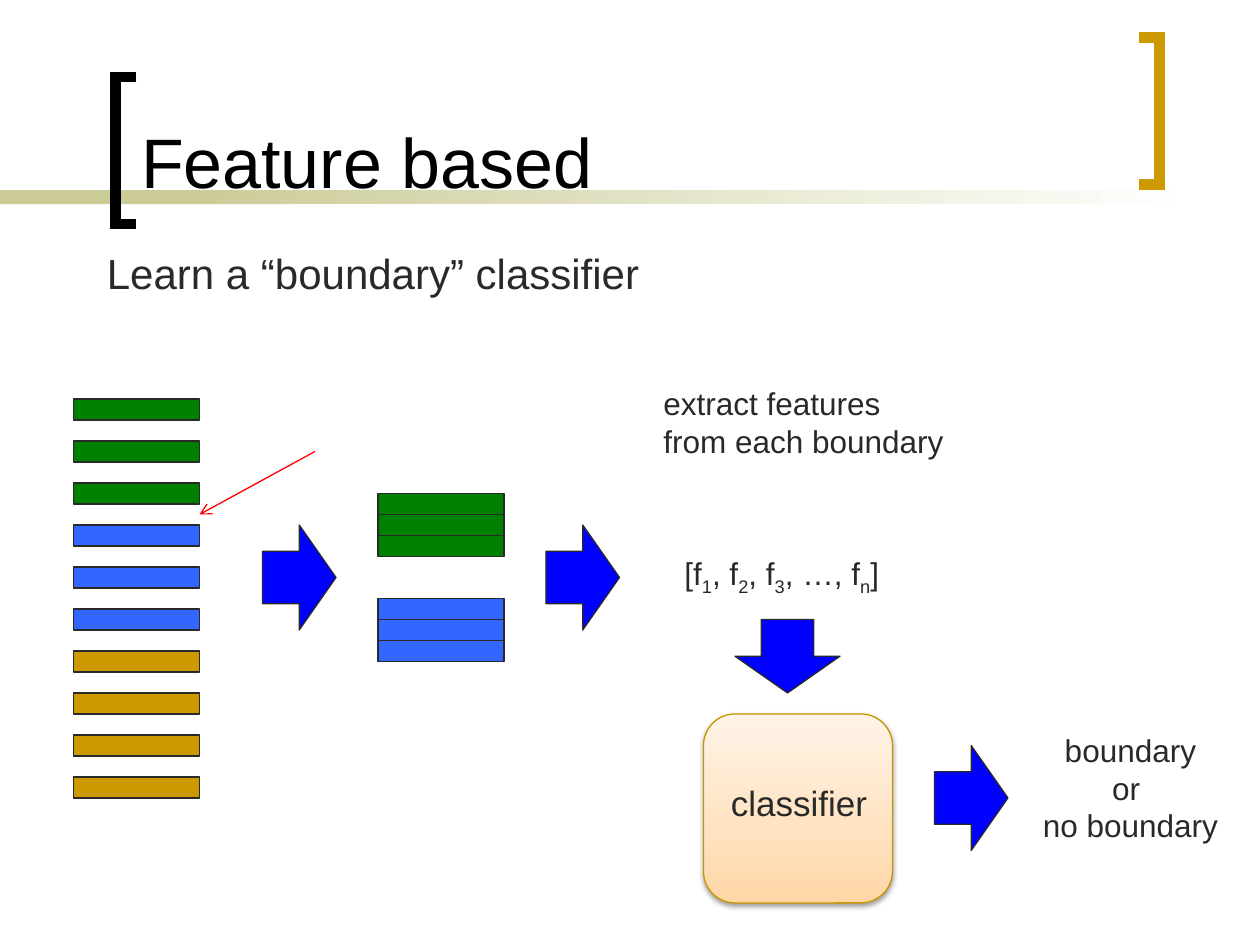
from dataclasses import dataclass

from lxml.etree import SubElement
from pptx import Presentation
from pptx.dml.color import RGBColor
from pptx.enum.shapes import MSO_CONNECTOR, MSO_SHAPE
from pptx.enum.text import MSO_ANCHOR, PP_ALIGN
from pptx.oxml.ns import qn
from pptx.util import Pt


@dataclass(frozen=True)
class Theme:
    """Colours, font and type sizes of the slide."""
    font: str = "Arial"
    black: str = "000000"
    ink: str = "292929"
    green: str = "008000"
    blue: str = "3366FF"
    gold: str = "CC9900"
    arrow: str = "0000FF"
    pointer: str = "FF0000"
    band: str = "CCCC99"
    white: str = "FFFFFF"
    classifier_line: str = "C89600"
    classifier_stops: tuple = ((0, "FFD6A5"), (35, "FFE2BF"), (100, "FFF3E7"))
    title_size: int = 40
    body_size: int = 24
    classifier_size: int = 20
    label_size: int = 18
    thin: float = 0.75
    thick: float = 6


THEME = Theme()


def add_text(slide, box, text, size=THEME.label_size, color=THEME.ink, wrap=False,
             anchor=MSO_ANCHOR.TOP, align=PP_ALIGN.LEFT, space_before=0):
    """Add a text box; parts between underscores become subscripts."""
    frame = slide.shapes.add_textbox(*map(Pt, box)).text_frame
    frame.word_wrap = wrap
    frame.vertical_anchor = anchor
    for index, line in enumerate(text.split("\n")):
        paragraph = frame.add_paragraph() if index else frame.paragraphs[0]
        paragraph.alignment = align
        paragraph.space_before = Pt(space_before)
        for position, part in enumerate(line.split("_")):
            run = paragraph.add_run()
            run.text = part
            run.font.name = THEME.font
            run.font.size = Pt(size)
            run.font.color.rgb = RGBColor.from_string(color)
            if position % 2:
                run.font._element.set("baseline", "-25000")


def add_block(slide, box, fill=None, line=THEME.ink, kind=MSO_SHAPE.RECTANGLE, rotation=0):
    """Add a preset shape with a solid fill and a thin outline."""
    shape = slide.shapes.add_shape(kind, *map(Pt, box))
    shape.shadow.inherit = False
    shape.rotation = rotation
    if fill:
        shape.fill.solid()
        shape.fill.fore_color.rgb = RGBColor.from_string(fill)
    if line:
        shape.line.color.rgb = RGBColor.from_string(line)
        shape.line.width = Pt(THEME.thin)
    else:
        shape.line.fill.background()
    return shape


def set_gradient(shape, stops, angle):
    """Fill a shape with a linear gradient of (percent, colour) stops."""
    shape.fill.gradient()
    shape.fill.gradient_angle = angle
    stop_list = shape._element.spPr.find(qn("a:gradFill")).find(qn("a:gsLst"))
    for stop in list(stop_list):
        stop_list.remove(stop)
    for percent, color in stops:
        stop = SubElement(stop_list, qn("a:gs"), pos=str(percent * 1000))
        SubElement(stop, qn("a:srgbClr"), val=color)


def add_bracket(slide, box, color, opens_right):
    """Draw a square bracket that fills the box."""
    left, top, width, height = box
    tip, spine = (left + width, left) if opens_right else (left, left + width)
    builder = slide.shapes.build_freeform(Pt(tip), Pt(top))
    corners = [(spine, top), (spine, top + height), (tip, top + height)]
    builder.add_line_segments([(Pt(x), Pt(y)) for x, y in corners], close=False)
    bracket = builder.convert_to_shape()
    bracket.shadow.inherit = False
    bracket.fill.background()
    bracket.line.color.rgb = RGBColor.from_string(color)
    bracket.line.width = Pt(THEME.thick)
    SubElement(bracket.line._get_or_add_ln(), qn("a:miter"), lim="800000")


def add_header(slide, box):
    """Draw the band, the brackets and the title."""
    left, top, width, height = box
    band_top = top + 108.7
    add_block(slide, (left, band_top, 168, 8), THEME.band, line=None)
    fade = add_block(slide, (left + 114, band_top, width - 150, 8), line=None)
    set_gradient(fade, ((0, THEME.band), (100, THEME.white)), 0)
    add_bracket(slide, (left + 66, top + 44, 12, 84), THEME.black, True)
    add_bracket(slide, (left + 650.6, top + 21.4, 12, 84), THEME.gold, False)
    add_text(slide, (left + 73.5, top + 8, 564, height - 25), "Feature based",
             size=THEME.title_size, color=THEME.black, wrap=True, anchor=MSO_ANCHOR.BOTTOM)


def add_bars(slide, box, colors, step):
    """Stack bars downwards from the box of the first one."""
    left, top, width, height = box
    for index, color in enumerate(colors):
        add_block(slide, (left, top + index * step, width, height), color)


def add_arrow(slide, left, top, rotation=0):
    """Draw one block arrow of the flow."""
    add_block(slide, (left, top, 42, 60), THEME.arrow,
              kind=MSO_SHAPE.RIGHT_ARROW, rotation=rotation)


def add_pointer(slide, start, end):
    """Draw the thin line that points at a boundary."""
    connector = slide.shapes.add_connector(MSO_CONNECTOR.STRAIGHT, *map(Pt, start + end))
    connector.line.color.rgb = RGBColor.from_string(THEME.pointer)
    connector.line.width = Pt(THEME.thin)
    SubElement(connector.line._get_or_add_ln(), qn("a:tailEnd"), type="arrow")
    SubElement(connector._element.spPr, qn("a:effectLst"))


def add_segments(slide, box):
    """Draw the sentence bars and the two segments grouped from them."""
    left, top, width, height = box
    sentences = [THEME.green] * 3 + [THEME.blue] * 3 + [THEME.gold] * 4
    add_bars(slide, (left, top, 72, 12), sentences, 24)
    add_arrow(slide, left + 108, top + 72)
    for offset, color in ((54, THEME.green), (114, THEME.blue)):
        add_bars(slide, (left + width - 72, top + offset, 72, 12), [color] * 3, 12)
    add_pointer(slide, (left + 138, top + 30), (left + 72, top + 66))


def add_features(slide, box):
    """Write the feature caption and the feature vector."""
    left, top, width, height = box
    add_text(slide, (left, top, width, 51), "extract features\nfrom each boundary")
    add_text(slide, (left + 12, top + height - 29, 130, 29), "[f_1_, f_2_, f_3_, …, f_n_]")


def add_classifier(slide, box):
    """Draw the classifier box with its soft shadow and label."""
    left, top, width, height = box
    shape = add_block(slide, box, line=THEME.classifier_line, kind=MSO_SHAPE.ROUNDED_RECTANGLE)
    set_gradient(shape, THEME.classifier_stops, 90)
    effects = shape._element.spPr.find(qn("a:effectLst"))
    shadow = SubElement(effects, qn("a:outerShdw"), blurRad=str(Pt(3.1)),
                        dist=str(Pt(1.6)), dir="5400000", rotWithShape="0")
    shade = SubElement(shadow, qn("a:srgbClr"), val=THEME.black)
    SubElement(shade, qn("a:alpha"), val="38000")
    add_text(slide, (left + 8.5, top + 34.8, 93.6, 31.5), "classifier",
             size=THEME.classifier_size)


def main():
    """Build the slide and save it."""
    presentation = Presentation()
    presentation.slide_width, presentation.slide_height = Pt(720), Pt(540)
    slide = presentation.slides.add_slide(presentation.slide_layouts[6])
    add_header(slide, (0, 0, 720, 136))
    add_text(slide, (54, 138, 594, 42), "Learn a “boundary” classifier",
             size=THEME.body_size, wrap=True, space_before=4.8)
    add_segments(slide, (42, 228, 246, 228))
    add_arrow(slide, 312, 300)
    add_features(slide, (372, 216, 176.4, 126))
    add_classifier(slide, (402, 408, 108, 108))
    add_arrow(slide, 429, 345, rotation=90)
    add_arrow(slide, 534, 426)
    add_text(slide, (588, 414, 116, 72.7), "boundary\nor \nno boundary",
             align=PP_ALIGN.CENTER)
    presentation.save("out.pptx")


if __name__ == "__main__":
    main()
